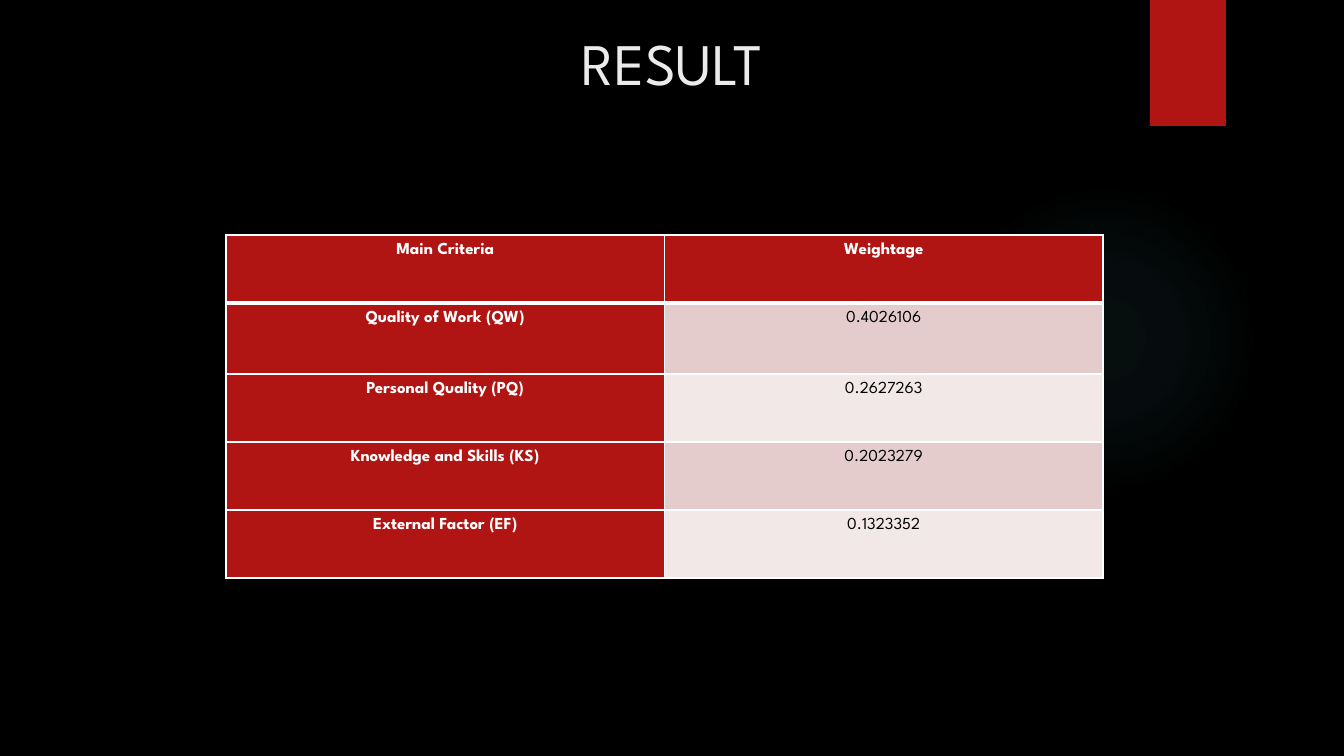
from pptx import Presentation
from pptx.dml.color import RGBColor
from pptx.enum.shapes import MSO_SHAPE
from pptx.enum.text import MSO_ANCHOR, PP_ALIGN
from pptx.oxml import parse_xml
from pptx.oxml.ns import nsdecls, qn
from pptx.util import Emu, Pt

BLACK = RGBColor(0x00, 0x00, 0x00)
WHITE = RGBColor(0xFF, 0xFF, 0xFF)
RED = RGBColor(0xB0, 0x15, 0x13)
TITLE_GRAY = RGBColor(0xEB, 0xEB, 0xEB)
BAND_DARK = RGBColor(0xE4, 0xCC, 0xCC)
BAND_LIGHT = RGBColor(0xF2, 0xE8, 0xE7)
GLOW = RGBColor(0x50, 0xB9, 0xC1)


def px(length):
    return Emu(round(length * 914400 / 100.8))


def write_text(frame, text, size, color, bold=False, spacing=None):
    paragraph = frame.paragraphs[0]
    paragraph.alignment = PP_ALIGN.CENTER
    paragraph.line_spacing = spacing
    run = paragraph.add_run()
    run.text = text
    run.font.name = "League Spartan"
    run.font.size = Pt(size)
    run.font.bold = bold
    run.font.color.rgb = color


presentation = Presentation()
presentation.slide_width, presentation.slide_height = px(1344), px(756)
slide = presentation.slides.add_slide(presentation.slide_layouts[5])
slide.background.fill.solid()
slide.background.fill.fore_color.rgb = BLACK

# Soft round glow
glow = slide.shapes.add_shape(MSO_SHAPE.OVAL, px(949), px(184), px(310), px(310))
glow.shadow.inherit = False
glow.line.fill.background()
glow.fill.gradient()
stops = "".join(
    f'<a:gs pos="{position * 1000}"><a:srgbClr val="{GLOW}">'
    f'<a:alpha val="{opacity * 1000}"/></a:srgbClr></a:gs>'
    for position, opacity in ((0, 7), (36, 6), (69, 0))
)
radial = parse_xml(
    f'<a:gradFill {nsdecls("a")}><a:gsLst>{stops}</a:gsLst><a:path path="circle">'
    '<a:fillToRect l="50000" t="50000" r="50000" b="50000"/></a:path></a:gradFill>'
)
linear = glow._element.spPr.find(qn("a:gradFill"))
linear.getparent().replace(linear, radial)

# Red ribbon
ribbon = slide.shapes.add_shape(MSO_SHAPE.RECTANGLE, px(1150), 0, px(76), px(126))
ribbon.shadow.inherit = False
ribbon.fill.solid()
ribbon.fill.fore_color.rgb = RED
ribbon.line.fill.background()

# Title, in front of the decoration
title = slide.shapes.title
title._element.getparent().append(title._element)
title.left, title.top, title.width, title.height = px(93), px(22), px(1159), px(146)
title.text_frame.vertical_anchor = MSO_ANCHOR.TOP
write_text(title.text_frame, "RESULT", size=42, color=TITLE_GRAY)

# Table of weights
rows = [
    ("Main Criteria", "Weightage"),
    ("Quality of Work (QW)", "0.4026106"),
    ("Personal Quality (PQ)", "0.2627263"),
    ("Knowledge and Skills (KS)", "0.2023279"),
    ("External Factor (EF)", "0.1323352"),
]
row_heights = [68, 71, 68, 68, 68]
table = slide.shapes.add_table(
    len(rows), 2, px(226), px(235), px(877), px(sum(row_heights))
).table
for column in table.columns:
    column.width = px(438.5)

for row_index, (values, height) in enumerate(zip(rows, row_heights)):
    table.rows[row_index].height = px(height)
    for column_index, value in enumerate(values):
        cell = table.cell(row_index, column_index)
        cell.margin_left = cell.margin_right = px(7)
        cell.margin_top = cell.margin_bottom = 0
        heading = row_index == 0 or column_index == 0

        # White borders, thick under the header row
        for side in ("L", "R", "T", "B"):
            thick = (row_index, side) in ((0, "B"), (1, "T"))
            cell._tc.get_or_add_tcPr().append(parse_xml(
                f'<a:ln{side} {nsdecls("a")} w="{Pt(3 if thick else 1)}"><a:solidFill>'
                f'<a:srgbClr val="{WHITE}"/></a:solidFill></a:ln{side}>'
            ))

        cell.fill.solid()
        band = BAND_DARK if row_index % 2 else BAND_LIGHT
        cell.fill.fore_color.rgb = RED if heading else band
        write_text(cell.text_frame, value, size=12, bold=heading, spacing=1.5,
                   color=WHITE if heading else BLACK)

presentation.save("out.pptx")
